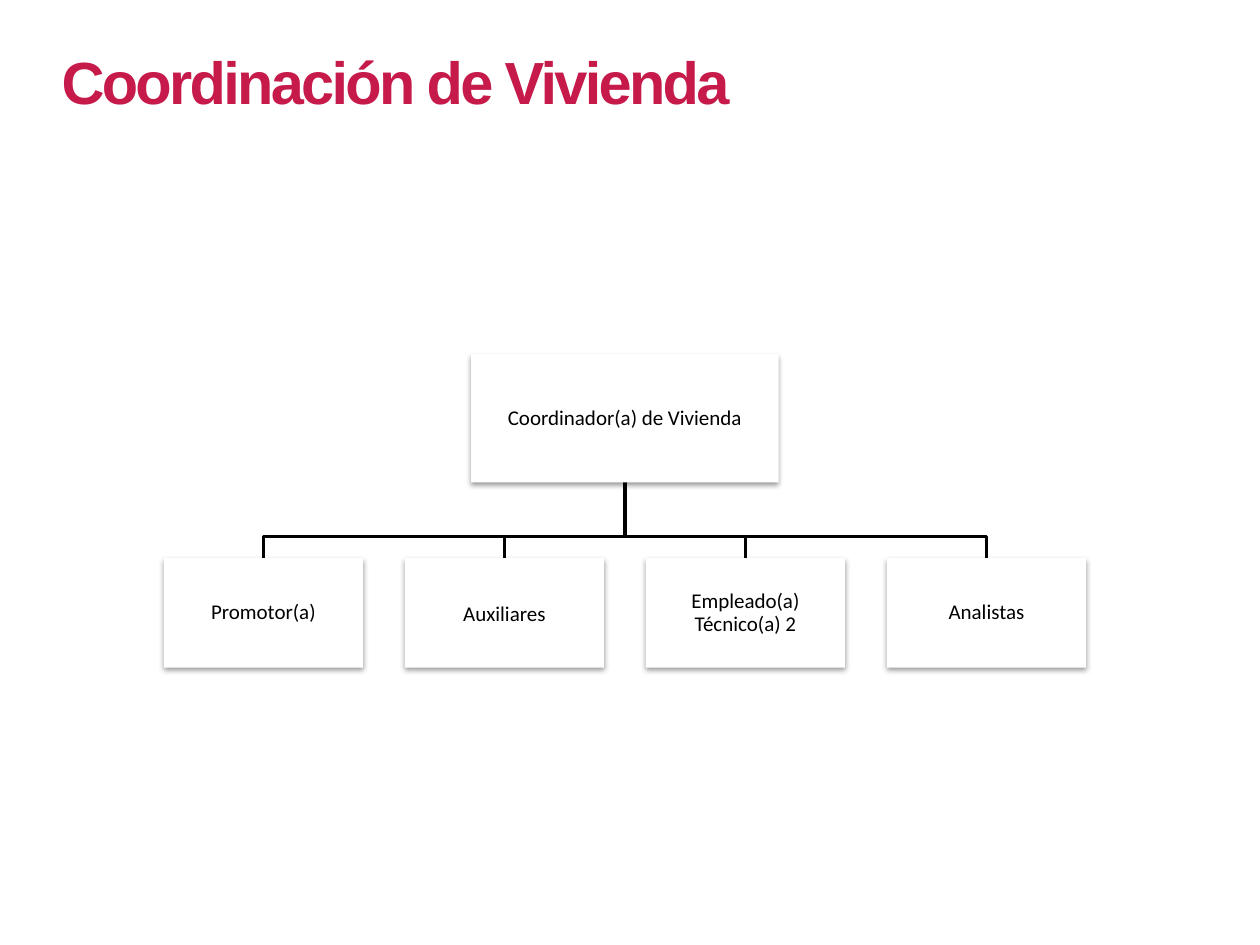
from lxml import etree
from pptx import Presentation
from pptx.dml.color import RGBColor
from pptx.enum.shapes import MSO_SHAPE
from pptx.enum.text import MSO_ANCHOR, MSO_AUTO_SIZE, PP_ALIGN
from pptx.oxml.ns import qn
from pptx.util import Pt

RECT = MSO_SHAPE.RECTANGLE
MIDDLE, TOP = MSO_ANCHOR.MIDDLE, MSO_ANCHOR.TOP
CENTER, LEFT = PP_ALIGN.CENTER, PP_ALIGN.LEFT
GROW = MSO_AUTO_SIZE.SHAPE_TO_FIT_TEXT

HEX = {"title": "C51A4A", "ink": "000000", "card": "FFFFFF"}
ROOT = "Coordinador(a) de Vivienda"
ROLES = ["Promotor(a)", "Auxiliares", "Empleado(a) Técnico(a) 2", "Analistas"]
ROOT_W, ROOT_H = 175.7, 73.4
ROLE_W, ROLE_H = 113.8, 62.6
STEM, DROP = 31, 12.3


def color(name):
    return RGBColor.from_string(HEX[name])


def apply(item, **values):
    for name, value in values.items():
        setattr(item, name, value)


def add_title(slide, box):
    shape = slide.shapes.title
    left, top, width, height = map(Pt, box)
    apply(shape, left=left, top=top, width=width, height=height)
    frame = shape.text_frame
    apply(frame, text="Coordinación de Vivienda", word_wrap=True,
          auto_size=GROW, vertical_anchor=TOP, margin_top=Pt(7))
    para = frame.paragraphs[0]
    para.alignment = LEFT
    run = para.runs[0]
    apply(run.font, name="Arial", size=Pt(34), bold=True)
    run.font.color.rgb = color("title")
    run.font._element.set("spc", "-150")


def add_shade(shape):
    effects = etree.SubElement(shape._element.spPr, qn("a:effectLst"))
    shade = etree.SubElement(
        effects, qn("a:outerShdw"), blurRad=str(Pt(3.1)), dist=str(Pt(1.6)),
        dir="5400000", algn="ctr", rotWithShape="0")
    tint = etree.SubElement(shade, qn("a:srgbClr"), val=HEX["ink"])
    etree.SubElement(tint, qn("a:alpha"), val="38000")


def add_card(slide, label, box, pitch=0.9):
    shape = slide.shapes.add_shape(RECT, *map(Pt, box))
    shape.fill.solid()
    shape.fill.fore_color.rgb = color("card")
    shape.line.fill.background()
    add_shade(shape)
    frame = shape.text_frame
    inset = Pt(0.6)
    apply(frame, text=label, word_wrap=True, vertical_anchor=MIDDLE,
          margin_left=inset, margin_right=inset,
          margin_top=inset, margin_bottom=inset)
    para = frame.paragraphs[0]
    apply(para, alignment=CENTER, line_spacing=pitch)
    apply(para.font, name="Calibri", size=Pt(12))
    para.font.color.rgb = color("ink")


def add_branch(slide, start, end):
    (x, y), (goal, base) = start, end
    bend = y + STEM
    pen = slide.shapes.build_freeform(Pt(x), Pt(y))
    points = [(x, bend), (goal, bend), (goal, base)]
    pen.add_line_segments([(Pt(a), Pt(b)) for a, b in points], close=False)
    shape = pen.convert_to_shape()
    shape.shadow.inherit = False
    shape.fill.background()
    shape.line.color.rgb = color("ink")
    shape.line.width = Pt(2)


def add_chart(slide, box):
    left, top, width, height = box
    mid = left + width / 2
    step = (width - ROLE_W) / (len(ROLES) - 1)
    row = top + ROOT_H + STEM + DROP
    spots = [left + i * step for i in range(len(ROLES))]
    for spot in reversed(spots):
        add_branch(slide, (mid, top + ROOT_H), (spot + ROLE_W / 2, row))
    add_card(slide, ROOT, (mid - ROOT_W / 2, top, ROOT_W, ROOT_H))
    for role, spot in zip(ROLES, spots):
        pitch = 1.0 if role == "Auxiliares" else 0.9
        add_card(slide, role, (spot, row, ROLE_W, ROLE_H), pitch)


def main():
    deck = Presentation()
    apply(deck, slide_width=Pt(720), slide_height=Pt(540))
    slide = deck.slides.add_slide(deck.slide_layouts[5])
    add_title(slide, (28, 18.7, 502, 49.7))
    add_chart(slide, (93.6, 202.3, 527, 179.3))
    deck.save("out.pptx")


if __name__ == "__main__":
    main()
